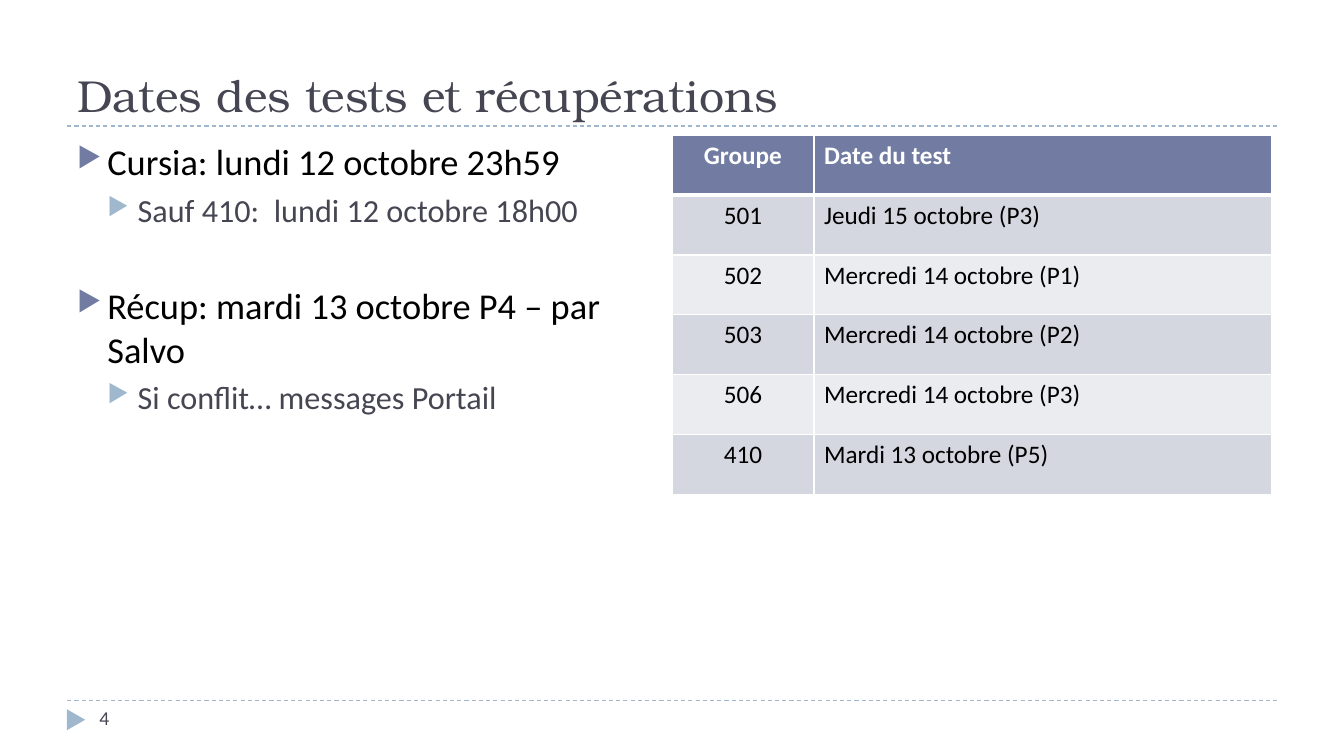
from pptx import Presentation
from pptx.dml.color import RGBColor
from pptx.enum.dml import MSO_LINE
from pptx.enum.shapes import MSO_CONNECTOR, MSO_SHAPE
from pptx.enum.text import MSO_ANCHOR, PP_ALIGN
from pptx.oxml import parse_xml
from pptx.oxml.ns import nsdecls
from pptx.util import Pt

STRAIGHT, DASH = MSO_CONNECTOR.STRAIGHT, MSO_LINE.DASH
TRIANGLE = MSO_SHAPE.ISOSCELES_TRIANGLE
TOP, BOTTOM = MSO_ANCHOR.TOP, MSO_ANCHOR.BOTTOM
LEFT, CENTER = PP_ALIGN.LEFT, PP_ALIGN.CENTER

SERIF, SANS = "TeX Gyre Bonum", "Calibri"
INK, BLACK, WHITE = "464653", "000000", "FFFFFF"
VIOLET, SKY = "727CA3", "9FB8CD"
BANDS = ("D5D7E0", "EBECF0")

# Bullet levels: text format, bullet colour
LEVELS = (
    (dict(name=SANS, size=Pt(26), color=BLACK), VIOLET),
    (dict(name=SANS, size=Pt(23), color=INK), SKY),
)
INDENT = 21.6

# Level, space before, text
BULLETS = (
    (0, 6, "Cursia: lundi 12 octobre 23h59"),
    (1, 5, "Sauf 410:  lundi 12 octobre 18h00"),
    (0, 39, "Récup: mardi 13 octobre P4 – par Salvo"),
    (1, 5, "Si conflit… messages Portail"),
)
TESTS = (
    ("Groupe", "Date du test"),
    ("501", "Jeudi 15 octobre (P3)"),
    ("502", "Mercredi 14 octobre (P1)"),
    ("503", "Mercredi 14 octobre (P2)"),
    ("506", "Mercredi 14 octobre (P3)"),
    ("410", "Mardi 13 octobre (P5)"),
)


def rgb(color):
    return RGBColor.from_string(color)


def write(p, text, fmt):
    r = p.add_run()
    r.text = text
    for key, value in fmt.items():
        if key == "color":
            r.font.color.rgb = rgb(value)
        else:
            setattr(r.font, key, value)


def add_text_frame(s, x, y, w, h, anchor=TOP):
    tf = s.shapes.add_textbox(Pt(x), Pt(y), Pt(w), Pt(h)).text_frame
    tf.word_wrap = True
    tf.vertical_anchor = anchor
    return tf


def add_rule(s, x, y, w):
    line = s.shapes.add_connector(STRAIGHT, Pt(x), Pt(y), Pt(x + w), Pt(y))
    line.line.color.rgb = rgb(SKY)
    line.line.width = Pt(0.75)
    line.line.dash_style = DASH
    line._element.spPr.append(parse_xml(f"<a:effectLst {nsdecls('a')}/>"))


def add_title(s, x, y, w, h):
    tf = add_text_frame(s, x, y, w, h, BOTTOM)
    write(tf.paragraphs[0], "Dates des tests et récupérations",
          dict(name=SERIF, size=Pt(32), color=INK))
    add_rule(s, x, y + h, w)


def add_footer(s, x, y, w):
    add_rule(s, x, y, w)
    # Marker pointing right, then the page number
    sp = s.shapes.add_shape(TRIANGLE, Pt(x - 1.2), Pt(y + 7.2), Pt(15), Pt(13))
    sp.rotation = 90
    sp.shadow.inherit = False
    sp.fill.solid()
    sp.fill.fore_color.rgb = rgb(SKY)
    sp.line.fill.background()
    tf = add_text_frame(s, x + 16, y, 208, 28.8)
    write(tf.paragraphs[0], "4", dict(name=SANS, size=Pt(14), color=INK))


def add_bullets(s, x, y, w, h):
    tf = add_text_frame(s, x, y, w, h)
    for i, (level, space, text) in enumerate(BULLETS):
        p = tf.add_paragraph() if i else tf.paragraphs[0]
        fmt, bullet_color = LEVELS[level]
        p.level = level
        p.space_before = Pt(space)
        pPr = p._p.get_or_add_pPr()
        pPr.set("marL", str(Pt(INDENT * (level + 1))))
        pPr.set("indent", str(Pt(-INDENT)))
        for xml in (
            f'<a:buClr {nsdecls("a")}><a:srgbClr val="{bullet_color}"/></a:buClr>',
            f'<a:buSzPct {nsdecls("a")} val="76000"/>',
            f'<a:buChar {nsdecls("a")} char="▶"/>',
        ):
            pPr.append(parse_xml(xml))
        write(p, text, fmt)


def set_borders(cell, widths):
    tcPr = cell._tc.get_or_add_tcPr()
    for side, width in widths.items():
        tcPr.append(parse_xml(
            f'<a:ln{side} {nsdecls("a")} w="{Pt(width)}"><a:solidFill>'
            f'<a:srgbClr val="{WHITE}"/></a:solidFill></a:ln{side}>'))


def add_tests_table(s, x, y, w, h):
    table = s.shapes.add_table(len(TESTS), 2, Pt(x), Pt(y), Pt(w), Pt(h)).table
    group_w = 101.4
    for column, width in zip(table.columns, (group_w, w - group_w)):
        column.width = Pt(width)
    for i, row in enumerate(TESTS):
        table.rows[i].height = Pt(h / len(TESTS))
        header = i == 0
        fmt = dict(name=SANS, size=Pt(18), bold=header,
                   color=WHITE if header else BLACK)
        for j, text in enumerate(row):
            cell = table.cell(i, j)
            set_borders(cell, dict(L=1, R=1, T=3 if i == 1 else 1,
                                   B=3 if header else 1))
            cell.fill.solid()
            cell.fill.fore_color.rgb = rgb(VIOLET if header else BANDS[(i - 1) % 2])
            p = cell.text_frame.paragraphs[0]
            p.alignment = LEFT if j else CENTER
            write(p, text, fmt)


def main():
    prs = Presentation()
    prs.slide_width, prs.slide_height = Pt(960), Pt(540)
    s = prs.slides.add_slide(prs.slide_layouts[6])
    margin, width = 48, 864
    add_title(s, margin, 12, width, 78)
    add_footer(s, margin, 500.4, width)
    add_bullets(s, margin, 96, 444, 389)
    add_tests_table(s, 480, 96.6, 428, 256.8)
    prs.save("out.pptx")


if __name__ == "__main__":
    main()
